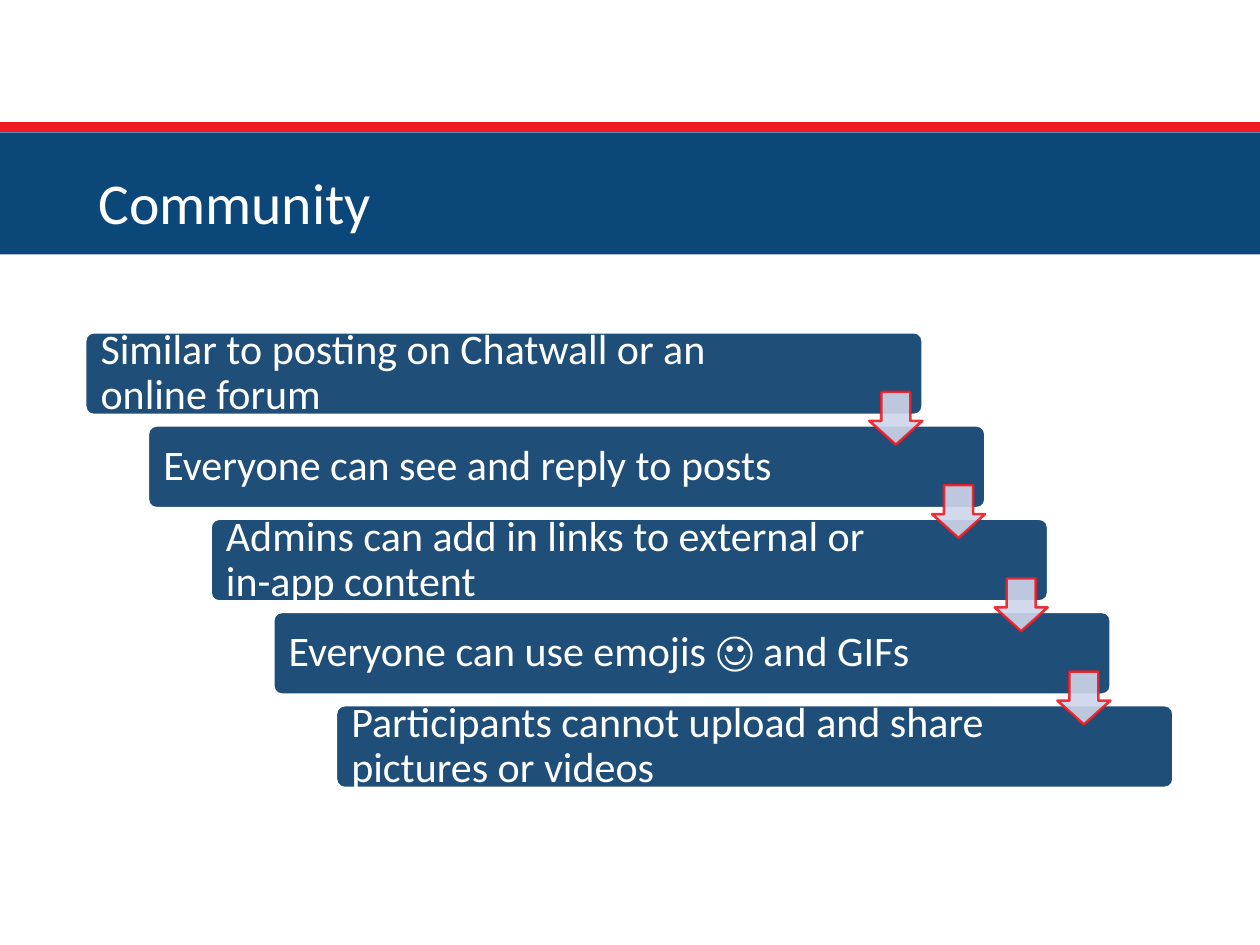
"""Build the Community slide: a title band above a staircase of five steps."""
from dataclasses import dataclass

from lxml import etree
from pptx import Presentation
from pptx import util as u
from pptx.dml.color import RGBColor
from pptx.enum import shapes, text
from pptx.oxml.ns import qn
from pptx.shapes.autoshape import Shape
from pptx.slide import Slide

WHITE = RGBColor(0xFF, 0xFF, 0xFF)
BAND_BLUE = RGBColor(0x0B, 0x47, 0x78)
STEP_BLUE = RGBColor(0x1F, 0x4E, 0x79)
ARROW_LILAC = RGBColor(0xCF, 0xD5, 0xEA)
RED = RGBColor(0xED, 0x1C, 0x24)

FONT = "Calibri"
SLIDE_WIDTH, SLIDE_HEIGHT = 10, 7.5
BAND_TOP, RULE_TOP = 1.05, 1.01
STAIR_LEFT, STAIR_TOP = 0.68, 2.64
COLUMN, ROW = 0.4975, 0.74
STEP_WIDTH, STEP_HEIGHT = 6.64, 0.65
TEXT_MARGIN = 0.02
ARROW_SIZE, ARROW_DROP = 0.42, 0.47


@dataclass(frozen=True)
class Box:
    """A rectangle in inches."""

    left: float
    top: float
    width: float
    height: float

    def lengths(self) -> list[u.Length]:
        """Return left, top, width and height as lengths."""
        return [u.Inches(value) for value in (self.left, self.top, self.width, self.height)]


@dataclass(frozen=True)
class Step:
    """One stair step, placed by its index in the staircase."""

    index: int
    wording: str
    text_width: float = 5.68

    @property
    def box(self) -> Box:
        """Return the step's rectangle on the grid."""
        return Box(STAIR_LEFT + self.index * COLUMN, STAIR_TOP + self.index * ROW,
                   STEP_WIDTH, STEP_HEIGHT)


STEPS = [
    Step(0, "Similar to posting on Chatwall or an online forum", 5.86),
    Step(1, "Everyone can see and reply to posts"),
    Step(2, "Admins can add in links to external or in-app content"),
    Step(3, "Everyone can use emojis ☺ and GIFs"),
    Step(4, "Participants cannot upload and share pictures or videos"),
]


def add_filled(slide: Slide, kind: shapes.MSO_SHAPE, box: Box, color: RGBColor) -> Shape:
    """Add a flat preset shape without an outline."""
    shape = slide.shapes.add_shape(kind, *box.lengths())
    shape.shadow.inherit = False
    shape.fill.solid()
    shape.fill.fore_color.rgb = color
    shape.line.fill.background()
    return shape


def outline(shape: Shape, color: RGBColor, width: float) -> None:
    """Give a shape a solid outline."""
    shape.line.color.rgb = color
    shape.line.width = u.Pt(width)


def write(shape: Shape, wording: str, size: float, anchor: text.MSO_ANCHOR) -> None:
    """Write one left-aligned white paragraph into a shape."""
    frame = shape.text_frame
    frame.word_wrap = True
    frame.auto_size = text.MSO_AUTO_SIZE.NONE
    frame.vertical_anchor = anchor
    frame.margin_left = frame.margin_right = u.Inches(0.1)
    paragraph = frame.paragraphs[0]
    paragraph.alignment = text.PP_ALIGN.LEFT
    paragraph.line_spacing = 0.9
    run = paragraph.add_run()
    run.text = wording
    run.font.name = FONT
    run.font.size = u.Pt(size)
    run.font.color.rgb = WHITE


def add_header(slide: Slide, wording: str) -> None:
    """Add the blue band, the red rule and the title above them."""
    add_filled(slide, shapes.MSO_SHAPE.RECTANGLE, Box(0, BAND_TOP, SLIDE_WIDTH, 0.97), BAND_BLUE)
    rule = slide.shapes.add_connector(shapes.MSO_CONNECTOR.STRAIGHT, 0, u.Inches(RULE_TOP),
                                      u.Inches(SLIDE_WIDTH), u.Inches(RULE_TOP))
    outline(rule, RED, 6)
    etree.SubElement(rule.element.spPr, qn("a:effectLst"))
    title = slide.shapes.title
    title.left, title.top, title.width, title.height = Box(STAIR_LEFT, 1, 8.62, 0.93).lengths()
    write(title, wording, 33, text.MSO_ANCHOR.BOTTOM)
    title.element.getparent().append(title.element)


def add_step(slide: Slide, step: Step) -> None:
    """Add a rounded step and its wording."""
    box = step.box
    bar = add_filled(slide, shapes.MSO_SHAPE.ROUNDED_RECTANGLE, box, STEP_BLUE)
    bar.adjustments[0] = 0.1
    outline(bar, WHITE, 1)
    text_box = Box(box.left + TEXT_MARGIN, box.top + TEXT_MARGIN,
                   step.text_width, box.height - 2 * TEXT_MARGIN)
    label = slide.shapes.add_textbox(*text_box.lengths())
    label.text_frame.margin_top = label.text_frame.margin_bottom = u.Inches(0.1)
    write(label, step.wording, 24, text.MSO_ANCHOR.MIDDLE)


def add_arrow(slide: Slide, step: Step) -> None:
    """Add a translucent arrow from a step's right end to the next step."""
    box = step.box
    arrow_box = Box(box.left + box.width - ARROW_SIZE, box.top + ARROW_DROP, ARROW_SIZE, ARROW_SIZE)
    arrow = add_filled(slide, shapes.MSO_SHAPE.DOWN_ARROW, arrow_box, ARROW_LILAC)
    arrow.adjustments[0], arrow.adjustments[1] = 0.55, 0.45
    outline(arrow, RED, 1.5)
    for color in arrow.element.spPr.iter(qn("a:srgbClr")):
        etree.SubElement(color, qn("a:alpha"), val="90000")


def main() -> None:
    """Build and save the presentation."""
    presentation = Presentation()
    presentation.slide_width = u.Inches(SLIDE_WIDTH)
    presentation.slide_height = u.Inches(SLIDE_HEIGHT)
    slide = presentation.slides.add_slide(presentation.slide_layouts.get_by_name("Title Only"))
    add_header(slide, "Community")
    for step in STEPS:
        add_step(slide, step)
    for step in STEPS[:-1]:
        add_arrow(slide, step)
    presentation.save("out.pptx")


if __name__ == "__main__":
    main()
